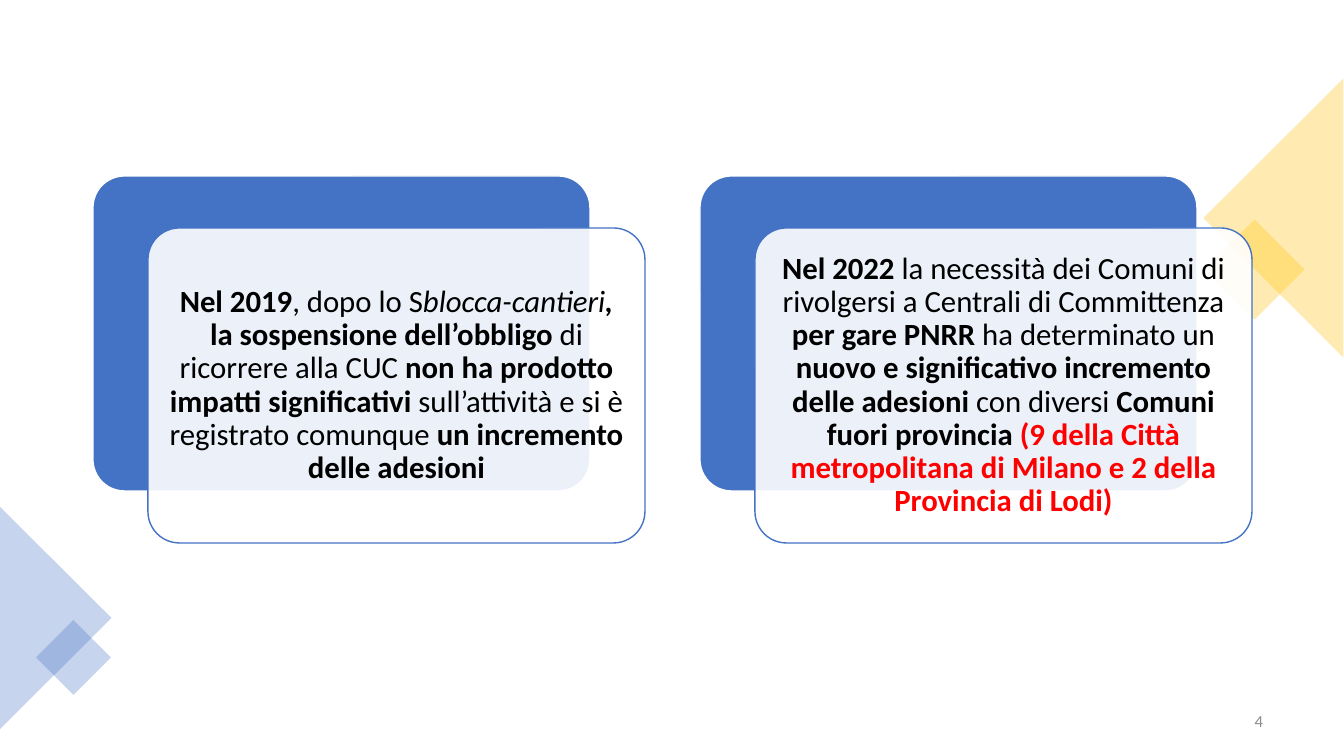
from dataclasses import dataclass

from lxml.etree import SubElement
from pptx import Presentation
from pptx.dml.color import RGBColor
from pptx.enum.shapes import MSO_SHAPE as SHAPE
from pptx.enum.text import MSO_ANCHOR as ANCHOR, PP_ALIGN as ALIGN
from pptx.oxml.ns import qn
from pptx.util import Pt

# Content: each card is a list of (text, style); b bold, i italic, r red
CARDS = [
    [
        ("Nel 2019", "b"),
        (", dopo lo S", ""),
        ("blocca-cantieri", "i"),
        (", ", "bi"),
        ("la sospensione dell’obbligo ", "b"),
        ("di ricorrere alla CUC", ""),
        (" non ha prodotto impatti significativi ", "b"),
        ("sull’attività e si è registrato comunque", ""),
        (" un incremento delle adesioni", "b"),
    ],
    [
        ("Nel 2022 ", "b"),
        ("la necessità dei Comuni di rivolgersi a Centrali di Committenza ", ""),
        ("per gare PNRR ", "b"),
        ("ha determinato un ", ""),
        ("nuovo e significativo incremento delle adesioni ", "b"),
        ("con diversi ", ""),
        ("Comuni fuori provincia ", "b"),
        ("(9 della Città metropolitana di Milano e 2 della Provincia di Lodi)", "br"),
    ],
]
PAGE_NUMBER = "4"


@dataclass(frozen=True)
class Theme:
    font: str = "Calibri"
    blue: str = "4472C4"
    gold: str = "FFC000"
    white: str = "FFFFFF"
    black: str = "000000"
    red: str = "FF0000"
    grey: str = "8C8C8C"
    body: int = 22
    small: int = 12


T = Theme()

# Corner decorations: shape, left, top, width, height, rotation, colour
CORNERS = [
    (SHAPE.RECTANGLE, 1219, 234, 71, 71, 45, T.gold),
    (SHAPE.ISOSCELES_TRIANGLE, 1134, 148, 279, 140, 270, T.gold),
    (SHAPE.ISOSCELES_TRIANGLE, -56, 562, 223, 112, 90, T.blue),
    (SHAPE.RECTANGLE, 47, 631, 53, 53, 45, T.blue),
]

# Layout in px
SLIDE_W, SLIDE_H = 1344, 756
CARD_X, CARD_Y, CARD_W, CARD_H = 93, 176, 497, 315
CARD_PITCH = 607
FRONT_DX, FRONT_DY = 55, 52
INSET = 9


def px(n):
    return round(n * 914400 / 100.8)


def rgb(colour):
    return RGBColor.from_string(colour)


def add_block(s, kind, x, y, w, h, fill, opacity=100, line=None):
    sp = s.shapes.add_shape(kind, px(x), px(y), px(w), px(h))
    sp.shadow.inherit = False
    sp.fill.solid()
    sp.fill.fore_color.rgb = rgb(fill)
    if opacity < 100:
        colour = sp.fill._xPr.find(qn("a:solidFill"))[0]
        SubElement(colour, qn("a:alpha")).set("val", str(opacity * 1000))
    if line:
        sp.line.color.rgb = rgb(line)
        sp.line.width = Pt(1)
    else:
        sp.line.fill.background()
    return sp


def add_card(s, x, runs):
    # Solid card behind, translucent text card in front
    back = add_block(s, SHAPE.ROUNDED_RECTANGLE, x, CARD_Y, CARD_W, CARD_H,
                     T.blue, line=T.white)
    front = add_block(s, SHAPE.ROUNDED_RECTANGLE, x + FRONT_DX, CARD_Y + FRONT_DY,
                      CARD_W, CARD_H, T.white, 90, T.blue)
    for sp in (back, front):
        sp.adjustments[0] = 0.1

    tf = front.text_frame
    tf.word_wrap = True
    tf.vertical_anchor = ANCHOR.MIDDLE
    tf.margin_left = tf.margin_right = tf.margin_top = tf.margin_bottom = px(INSET)
    p = tf.paragraphs[0]
    p.alignment = ALIGN.CENTER
    p.line_spacing = 0.9
    p.font.name, p.font.size = T.font, Pt(T.body)
    for text, style in runs:
        r = p.add_run()
        r.text = text
        r.font.bold = "b" in style
        r.font.italic = "i" in style
        r.font.color.rgb = rgb(T.red if "r" in style else T.black)


def add_page_number(s):
    tf = s.shapes.add_textbox(px(971), px(701), px(302), px(40)).text_frame
    tf.word_wrap = True
    tf.vertical_anchor = ANCHOR.MIDDLE
    p = tf.paragraphs[0]
    p.text = PAGE_NUMBER
    p.alignment = ALIGN.RIGHT
    p.font.name, p.font.size = T.font, Pt(T.small)
    p.font.color.rgb = rgb(T.grey)


def main():
    prs = Presentation()
    prs.slide_width, prs.slide_height = px(SLIDE_W), px(SLIDE_H)
    s = prs.slides.add_slide(prs.slide_layouts[6])

    # Corners
    for kind, x, y, w, h, rotation, colour in CORNERS:
        add_block(s, kind, x, y, w, h, colour, 30).rotation = rotation

    # Page number and cards
    add_page_number(s)
    for i, runs in enumerate(CARDS):
        add_card(s, CARD_X + i * CARD_PITCH, runs)

    prs.save("out.pptx")


if __name__ == "__main__":
    main()
